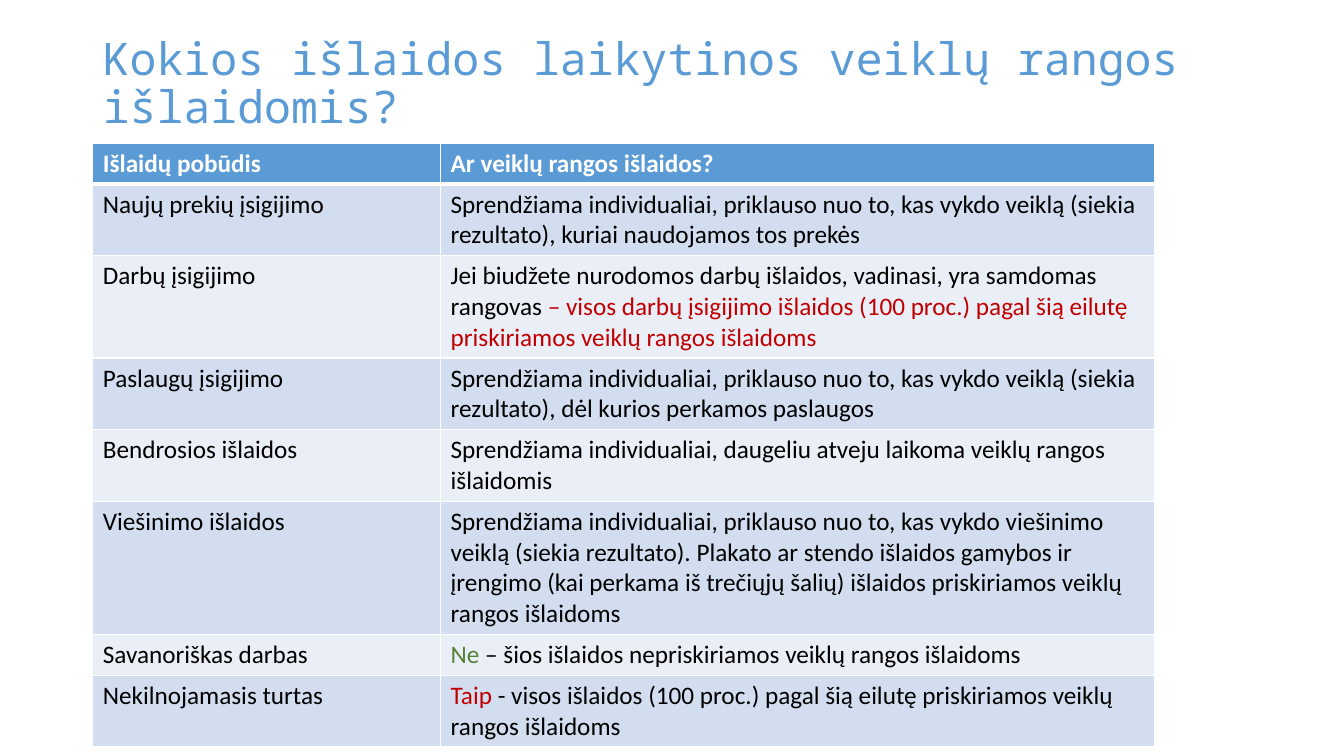
from lxml.etree import SubElement as Sub
from pptx import Presentation
from pptx.dml.color import RGBColor as Rgb
from pptx.enum.text import MSO_ANCHOR as Anchor, MSO_AUTO_SIZE as Auto, PP_ALIGN as Align
from pptx.oxml.ns import qn
from pptx.util import Inches, Pt

HUES = {"blue": "5B9BD5", "dark": "D2DEEF", "light": "EAEFF7", "white": "FFFFFF",
        "black": "000000", "red": "C00000", "green": "548235"}
HEAD = {"name": "Noto Sans Mono", "size": Pt(32), "bold": False}
BODY = {"name": "Calibri", "size": Pt(18)}
TITLE = "Kokios išlaidos laikytinos veiklų rangos išlaidomis?"
COLS = [3.45, 7.08]
ROWS = [
    (0.38, "Išlaidų pobūdis", [("Ar veiklų rangos išlaidos?", "white")]),
    (0.66, "Naujų prekių įsigijimo", [
        ("Sprendžiama individualiai, priklauso nuo to, kas vykdo veiklą "
         "(siekia rezultato), kuriai naudojamos tos prekės", "black")]),
    (0.94, "Darbų įsigijimo", [
        ("Jei biudžete nurodomos darbų išlaidos, vadinasi, yra samdomas rangovas ", "black"),
        ("– visos darbų įsigijimo išlaidos (100 proc.) pagal šią eilutę "
         "priskiriamos veiklų rangos išlaidoms", "red")]),
    (0.66, "Paslaugų įsigijimo", [
        ("Sprendžiama individualiai, priklauso nuo to, kas vykdo veiklą "
         "(siekia rezultato), dėl kurios perkamos paslaugos", "black")]),
    (0.66, "Bendrosios išlaidos", [
        ("Sprendžiama individualiai, daugeliu atveju laikoma veiklų rangos išlaidomis", "black")]),
    (0.94, "Viešinimo išlaidos", [
        ("Sprendžiama individualiai, priklauso nuo to, kas vykdo viešinimo veiklą "
         "(siekia rezultato). Plakato ar stendo išlaidos gamybos ir įrengimo (kai perkama "
         "iš trečiųjų šalių) išlaidos priskiriamos veiklų rangos išlaidoms", "black")]),
    (0.38, "Savanoriškas darbas", [
        ("Ne ", "green"), ("– šios išlaidos nepriskiriamos veiklų rangos išlaidoms", "black")]),
    (0.66, "Nekilnojamasis turtas", [
        ("Taip ", "red"),
        ("- visos išlaidos (100 proc.) pagal šią eilutę priskiriamos "
         "veiklų rangos išlaidoms", "black")]),
]


def put(item, form):
    """Set each attribute of item from a dict."""
    for key, value in form.items():
        setattr(item, key, value)


def write(para, text, hue, form):
    """Add one formatted run to a paragraph."""
    run = para.add_run()
    run.text = text
    put(run.font, form)
    run.font.color.rgb = Rgb.from_string(HUES[hue])


def edge(cell, low):
    """Draw white borders on a cell, with the bottom one low points wide."""
    props = cell._tc.get_or_add_tcPr()
    for side, width in zip("LRTB", (1, 1, 1, low)):
        line = Sub(props, qn(f"a:ln{side}"), w=str(Pt(width)))
        fill = Sub(line, qn("a:solidFill"))
        Sub(fill, qn("a:srgbClr"), val=HUES["white"])


def head(slide, box):
    """Place the title in the box."""
    title = slide.shapes.title
    put(title, dict(zip(("left", "top", "width", "height"), map(Inches, box))))
    frame = title.text_frame
    put(frame, {"word_wrap": True, "auto_size": Auto.NONE, "vertical_anchor": Anchor.MIDDLE})
    para = frame.paragraphs[0]
    put(para, {"alignment": Align.LEFT, "line_spacing": 0.9})
    write(para, TITLE, "blue", HEAD)


def grid(slide, box):
    """Place the cost table in the box."""
    table = slide.shapes.add_table(len(ROWS), len(COLS), *map(Inches, box)).table
    for col, width in zip(table.columns, COLS):
        col.width = Inches(width)
    for i, (tall, label, runs) in enumerate(ROWS):
        table.rows[i].height = Inches(tall)
        fill = ("dark" if i % 2 else "light") if i else "blue"
        form = BODY | {"bold": i == 0}
        for j, parts in enumerate(([(label, "black" if i else "white")], runs)):
            cell = table.cell(i, j)
            edge(cell, 1 if i else 3)
            cell.fill.solid()
            cell.fill.fore_color.rgb = Rgb.from_string(HUES[fill])
            for text, hue in parts:
                write(cell.text_frame.paragraphs[0], text, hue, form)


def main():
    """Build and save the slide."""
    deck = Presentation()
    put(deck, {"slide_width": Inches(13.33), "slide_height": Inches(7.5)})
    slide = deck.slides.add_slide(deck.slide_layouts[5])
    head(slide, (0.92, 0.12, 11.5, 1.45))
    grid(slide, (0.92, 1.42, sum(COLS), 5.9))
    deck.save("out.pptx")


if __name__ == "__main__":
    main()
